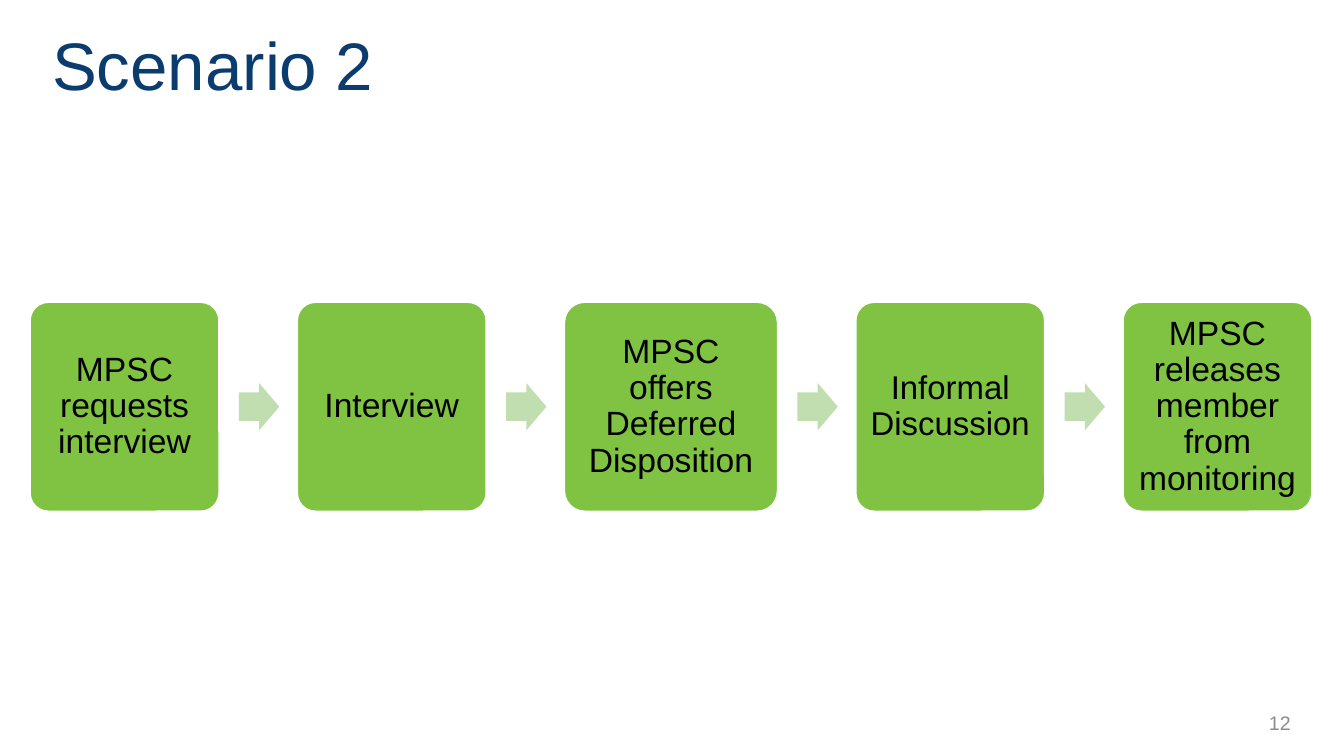
"""Build the Scenario 2 process slide."""
from pptx import Presentation
from pptx.dml.color import RGBColor
from pptx.enum.shapes import MSO_SHAPE
from pptx.enum.text import MSO_ANCHOR, PP_ALIGN
from pptx.util import Emu, Pt

ROUNDED, ARROW = MSO_SHAPE.ROUNDED_RECTANGLE, MSO_SHAPE.RIGHT_ARROW
MIDDLE = MSO_ANCHOR.MIDDLE
LEFT, CENTER, RIGHT = PP_ALIGN.LEFT, PP_ALIGN.CENTER, PP_ALIGN.RIGHT

TITLE = "Scenario 2"
PAGE_NUMBER = "12"
STEPS = [
    ("MPSC requests interview", 189, 24),
    ("Interview", 189, 24),
    ("MPSC offers Deferred Disposition", 213, 24),
    ("Informal Discussion", 189, 23.5),
    ("MPSC releases member from monitoring", 189, 24),
]
COLORS = {
    "step": "80C342", "arrow": "C0DEB0", "outline": "FFFFFF",
    "text": "000000", "title": "0A3C6E", "number": "8C8C8C",
}
FONT = "Arial"
EMU_PER_PX = 9144
STEP_LEFT, STEP_TOP, STEP_HEIGHT, STEP_GAP = 29, 299, 209, 76
ARROW_OFFSET, ARROW_WIDTH, ARROW_HEIGHT = 19, 40, 47


def px(value):
    return Emu(round(value * EMU_PER_PX))


def rgb(name):
    return RGBColor.from_string(COLORS[name])


def write(shape, text, size, color, align=LEFT, spacing=1.0, inset_x=10, inset_y=5):
    frame = shape.text_frame
    frame.word_wrap = True
    frame.vertical_anchor = MIDDLE
    frame.margin_left = frame.margin_right = px(inset_x)
    frame.margin_top = frame.margin_bottom = px(inset_y)
    para = frame.paragraphs[0]
    para.alignment = align
    para.line_spacing = spacing
    span = para.add_run()
    span.text = text
    span.font.name = FONT
    span.font.size = Pt(size)
    span.font.color.rgb = rgb(color)


def add_block(page, kind, bounds, color, adjustments):
    block = page.shapes.add_shape(kind, *map(px, bounds))
    block.shadow.inherit = False
    block.fill.solid()
    block.fill.fore_color.rgb = rgb(color)
    block.line.fill.background()
    for index, value in enumerate(adjustments):
        block.adjustments[index] = value
    return block


def add_steps(page):
    left = STEP_LEFT
    arrow_top = STEP_TOP + (STEP_HEIGHT - ARROW_HEIGHT) / 2
    for index, (text, width, size) in enumerate(STEPS):
        if index:
            arrow_left = left - STEP_GAP + ARROW_OFFSET
            add_block(page, ARROW, (arrow_left, arrow_top, ARROW_WIDTH, ARROW_HEIGHT),
                      "arrow", (0.6, 0.5))
        step = add_block(page, ROUNDED, (left, STEP_TOP, width, STEP_HEIGHT),
                         "step", (0.1,))
        step.line.color.rgb = rgb("outline")
        step.line.width = Pt(2.25)
        write(step, text, size, "text", align=CENTER, spacing=0.9, inset_x=9, inset_y=9)
        left += width + STEP_GAP


def main():
    deck = Presentation()
    deck.slide_width, deck.slide_height = px(1333), px(750)
    page = deck.slides.add_slide(deck.slide_layouts[6])
    add_steps(page)
    title = page.shapes.add_textbox(px(42), px(17), px(1274), px(93))
    write(title, TITLE, 48, "title")
    number = page.shapes.add_textbox(px(1064), px(697), px(226), px(40))
    write(number, PAGE_NUMBER, 14, "number", align=RIGHT)
    deck.save("out.pptx")


if __name__ == "__main__":
    main()
